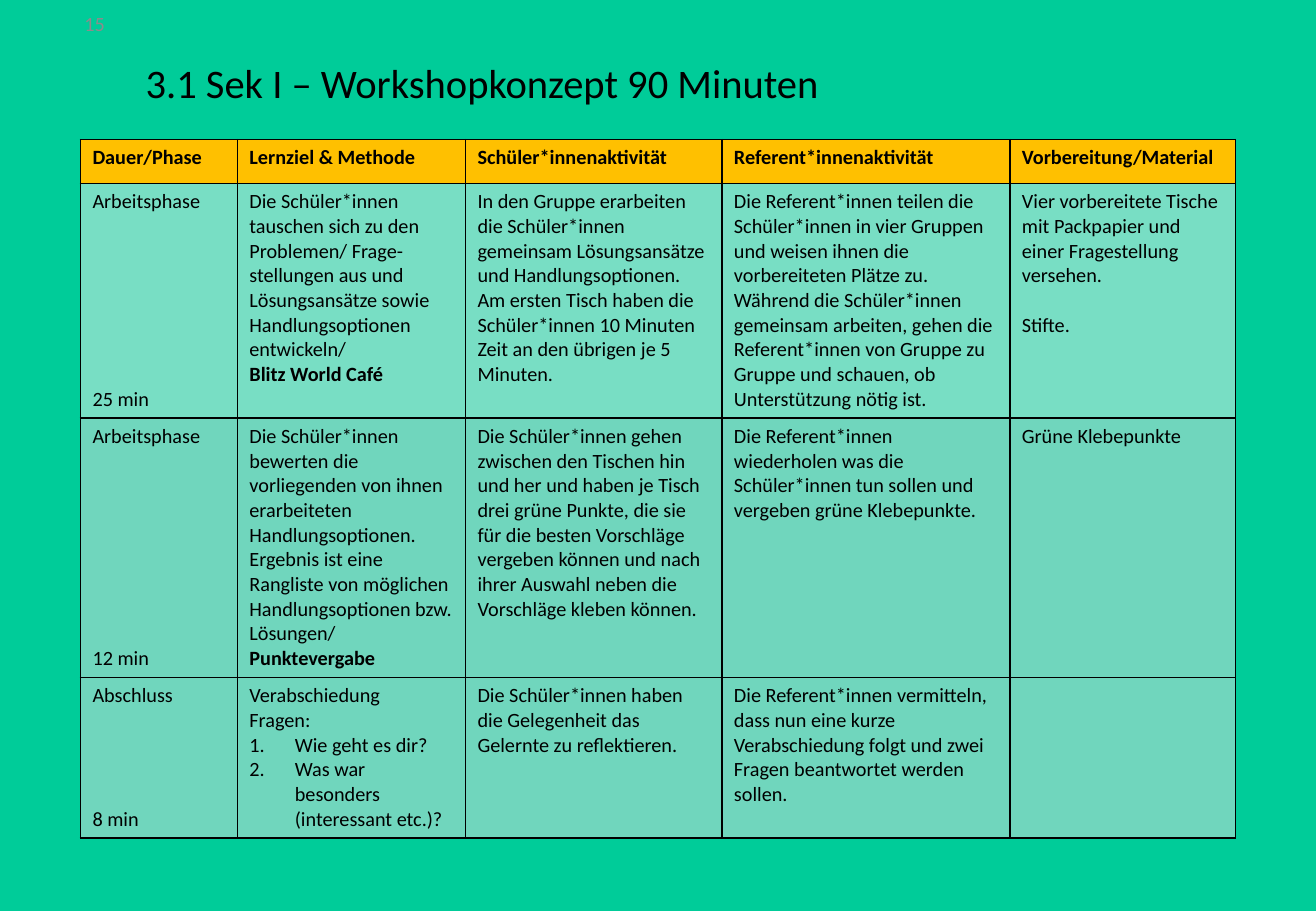
"""Build the workshop plan slide with its phase table."""
import dataclasses

import pptx
import pptx.dml.color
import pptx.enum.text
import pptx.oxml
import pptx.oxml.ns
import pptx.util
from pptx.util import Cm


@dataclasses.dataclass(frozen=True)
class Theme:
    font: str = "Calibri"
    background: str = "00CC99"
    text: str = "000000"
    number: str = "8C8C8C"
    header: str = "FFC000"
    light: str = "F0F0F0"
    dark: str = "E1E1E1"
    title_size: float = 24
    body_size: float = 12
    line_height: float = 14.65
    border: float = 1


@dataclasses.dataclass(frozen=True)
class Para:
    text: str
    lines_before: int = 0
    bold: bool = False
    numbered: bool = False


THEME = Theme()
COLUMNS = [3.28, 4.77, 5.36, 6.02, 4.72]
ROW_HEIGHTS = [0.92, 4.9, 5.41, 3.35]
ROW_FILLS = [THEME.header, THEME.light, THEME.dark, THEME.dark]
HEADERS = ["Dauer/Phase", "Lernziel & Methode", "Schüler*innenaktivität",
           "Referent*innenaktivität", "Vorbereitung/Material"]
ROWS = [
    [[Para(h, bold=True)] for h in HEADERS],
    [
        [Para("Arbeitsphase"), Para("25 min", lines_before=7)],
        [Para("Die Schüler*innen tauschen sich zu den Problemen/ Frage-stellungen aus und "
              "Lösungsansätze sowie Handlungsoptionen entwickeln/"),
         Para("Blitz World Café", bold=True)],
        [Para("In den Gruppe erarbeiten die Schüler*innen gemeinsam Lösungsansätze und "
              "Handlungsoptionen. Am ersten Tisch haben die Schüler*innen 10 Minuten Zeit "
              "an den übrigen je 5 Minuten.")],
        [Para("Die Referent*innen teilen die Schüler*innen in vier Gruppen und weisen ihnen "
              "die vorbereiteten Plätze zu. Während die Schüler*innen gemeinsam arbeiten, "
              "gehen die Referent*innen von Gruppe zu Gruppe und schauen, ob "
              "Unterstützung nötig ist.")],
        [Para("Vier vorbereitete Tische mit Packpapier und einer Fragestellung versehen."),
         Para("Stifte.", lines_before=1)],
    ],
    [
        [Para("Arbeitsphase"), Para("12 min", lines_before=8)],
        [Para("Die Schüler*innen bewerten die vorliegenden von ihnen erarbeiteten "
              "Handlungsoptionen. Ergebnis ist eine Rangliste von möglichen "
              "Handlungsoptionen bzw. Lösungen/"),
         Para("Punktevergabe", bold=True)],
        [Para("Die Schüler*innen gehen zwischen den Tischen hin und her und haben je Tisch "
              "drei grüne Punkte, die sie für die besten Vorschläge vergeben können und "
              "nach ihrer Auswahl neben die Vorschläge kleben können.")],
        [Para("Die Referent*innen wiederholen was die Schüler*innen tun sollen und vergeben "
              "grüne Klebepunkte.")],
        [Para("Grüne Klebepunkte")],
    ],
    [
        [Para("Abschluss"), Para("8 min", lines_before=4)],
        [Para("Verabschiedung"), Para("Fragen:"),
         Para("Wie geht es dir?", numbered=True),
         Para("Was war besonders (interessant etc.)?", numbered=True)],
        [Para("Die Schüler*innen haben die Gelegenheit das Gelernte zu reflektieren.")],
        [Para("Die Referent*innen vermitteln, dass nun eine kurze Verabschiedung folgt und "
              "zwei Fragen beantwortet werden sollen.")],
        [],
    ],
]


def rgb(value):
    """Turn a hex string into a colour."""
    return pptx.dml.color.RGBColor.from_string(value)


def set_attrs(obj, values):
    """Set each attribute named in a dict."""
    for name, value in values.items():
        setattr(obj, name, value)


def add_run(p, text, size, color=THEME.text, bold=False):
    """Add a formatted run to a paragraph."""
    r = p.add_run()
    r.text = text
    set_attrs(r.font, {"name": THEME.font, "size": pptx.util.Pt(size), "bold": bold})
    r.font.color.rgb = rgb(color)


def add_xml(parent, xml):
    """Append a DrawingML element and return it."""
    tag, _, rest = xml.partition(" ")
    ns = pptx.oxml.ns.nsdecls("a")
    element = pptx.oxml.parse_xml(f"{tag} {ns} {rest}")
    parent.append(element)
    return element


def number_paragraph(p):
    """Give a paragraph automatic numbering with a hanging indent."""
    pPr = p._p.get_or_add_pPr()
    indent = Cm(0.95)
    pPr.set("marL", str(indent))
    pPr.set("indent", str(-indent))
    add_xml(pPr, '<a:buFont typeface="+mj-lt"/>')
    add_xml(pPr, '<a:buAutoNum type="arabicPeriod"/>')


def format_cell(cell, color, alpha):
    """Draw a cell's borders and its fill."""
    tcPr = cell._tc.get_or_add_tcPr()
    for side in "LRTB":
        add_xml(tcPr, f'<a:ln{side} w="{pptx.util.Pt(THEME.border)}"><a:solidFill>'
                      f'<a:srgbClr val="{THEME.text}"/></a:solidFill></a:ln{side}>')
    cell.fill.solid()
    cell.fill.fore_color.rgb = rgb(color)
    if alpha < 100:
        clr = tcPr.find(pptx.oxml.ns.qn("a:solidFill"))[0]
        add_xml(clr, f'<a:alpha val="{alpha * 1000}"/>')


def fill_cell(cell, paras):
    """Write paragraphs into a cell."""
    tf = cell.text_frame
    for i, para in enumerate(paras):
        p = tf.add_paragraph() if i else tf.paragraphs[0]
        if para.lines_before:
            p.space_before = pptx.util.Pt(para.lines_before * THEME.line_height)
        if para.numbered:
            number_paragraph(p)
        add_run(p, para.text, THEME.body_size, bold=para.bold)


def add_title(s, text):
    """Place and format the title placeholder."""
    sp = s.shapes.title
    set_attrs(sp, {"left": Cm(2.79), "top": Cm(0.91), "width": Cm(21.89), "height": Cm(1.73)})
    tf = sp.text_frame
    set_attrs(tf, {"word_wrap": True, "vertical_anchor": pptx.enum.text.MSO_ANCHOR.MIDDLE})
    p = tf.paragraphs[0]
    set_attrs(p, {"alignment": pptx.enum.text.PP_ALIGN.LEFT, "line_spacing": 0.9})
    add_run(p, text, THEME.title_size)


def add_plan(s):
    """Add the table of workshop phases."""
    frame = s.shapes.add_table(len(ROWS), len(COLUMNS), Cm(1.68), Cm(2.92),
                               Cm(sum(COLUMNS)), Cm(sum(ROW_HEIGHTS)))
    table = frame.table
    set_attrs(table, {"first_row": False, "horz_banding": False})
    for col, width in zip(table.columns, COLUMNS):
        col.width = Cm(width)
    for i, (row, height) in enumerate(zip(table.rows, ROW_HEIGHTS)):
        row.height = Cm(height)
        for cell, paras in zip(row.cells, ROWS[i]):
            format_cell(cell, ROW_FILLS[i], 50 if i else 100)
            fill_cell(cell, paras)


def add_page_number(s, text):
    """Add the page number in the top left corner."""
    sp = s.shapes.add_textbox(Cm(0), Cm(0), Cm(3.96), Cm(1))
    tf = sp.text_frame
    set_attrs(tf, {"word_wrap": True, "vertical_anchor": pptx.enum.text.MSO_ANCHOR.MIDDLE})
    p = tf.paragraphs[0]
    p.alignment = pptx.enum.text.PP_ALIGN.CENTER
    add_run(p, text, THEME.body_size, THEME.number)


def main():
    """Build and save the presentation."""
    prs = pptx.Presentation()
    set_attrs(prs, {"slide_width": Cm(27.51), "slide_height": Cm(19.05)})
    s = prs.slides.add_slide(prs.slide_layouts[5])
    s.background.fill.solid()
    s.background.fill.fore_color.rgb = rgb(THEME.background)
    add_title(s, "3.1 Sek I – Workshopkonzept 90 Minuten")
    add_plan(s)
    add_page_number(s, "15")
    prs.save("out.pptx")


if __name__ == "__main__":
    main()
